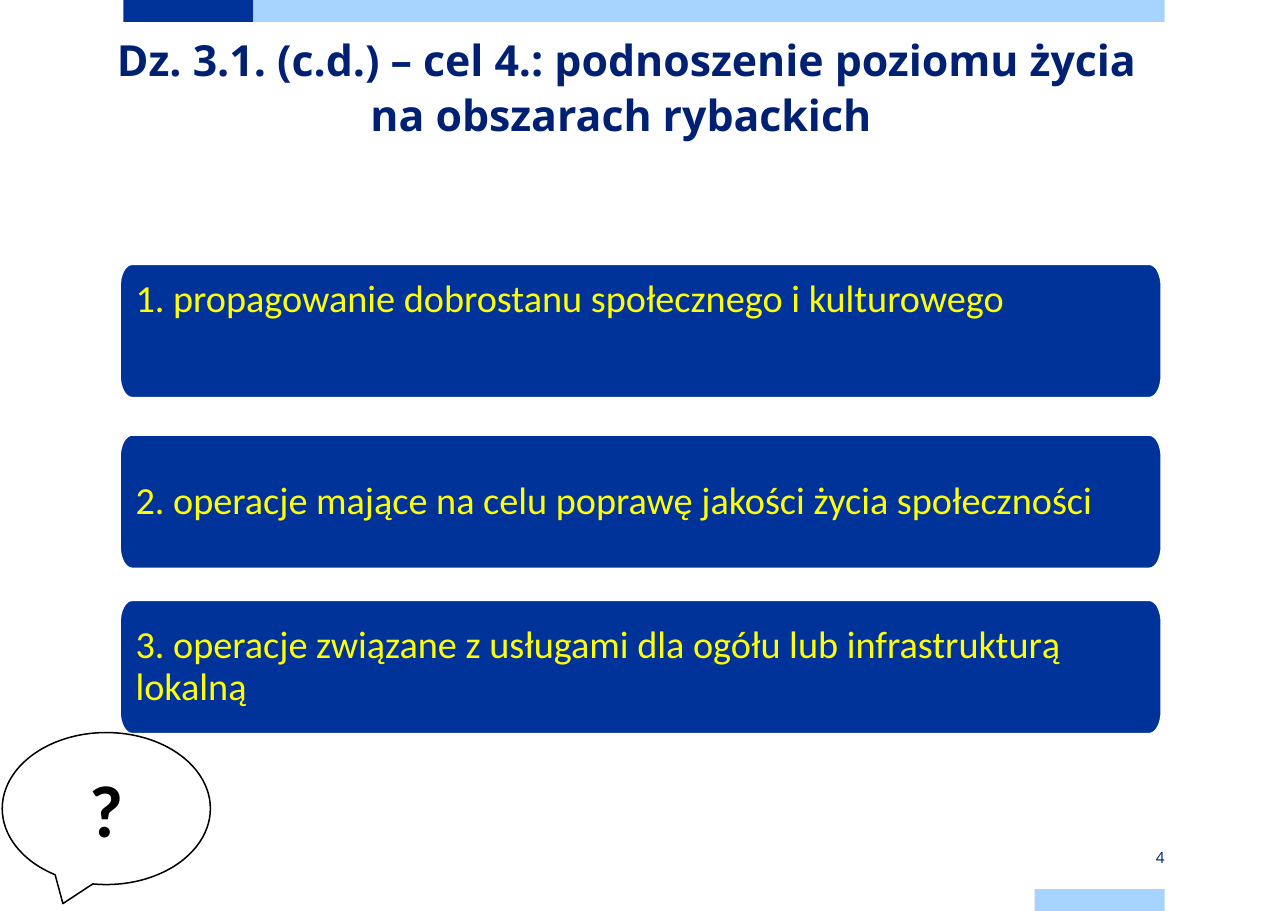
import math
from dataclasses import dataclass

from pptx import Presentation
from pptx import util as u
from pptx.dml.color import RGBColor
from pptx.enum import shapes, text

COLOURS = {
    "navy": "003399", "sky": "A6D3FF", "ink": "002073",
    "yellow": "FFFF00", "white": "FFFFFF", "black": "000000",
}
WIDTH, HEIGHT = u.Inches(11.69), u.Inches(8.27)
COLUMNS, ROWS = 99, 70
CORNER_COLUMNS, CORNER_ROWS = 0.93, 1.69
CORNER_STEPS = 8


@dataclass(frozen=True)
class Area:
    column: float
    row: float
    columns: float
    rows: float

    def box(self) -> tuple[int, int, int, int]:
        return (across(self.column), down(self.row),
                across(self.columns), down(self.rows))


@dataclass(frozen=True)
class Band:
    area: Area
    colour: str


@dataclass(frozen=True)
class Operation:
    row: float
    wording: str
    anchor: text.MSO_ANCHOR = text.MSO_ANCHOR.MIDDLE


@dataclass(frozen=True)
class Style:
    font: str
    size: float
    colour: str
    align: text.PP_ALIGN
    bold: bool = False
    spacing: float | u.Pt | None = None
    anchor: text.MSO_ANCHOR = text.MSO_ANCHOR.MIDDLE
    inset: float = 0


BANDS = [
    Band(Area(9.49, 0, 10, 1.69), "navy"),
    Band(Area(19.48, 0, 70.04, 1.69), "sky"),
    Band(Area(79.52, 68.31, 10, 1.69), "sky"),
]
OPERATIONS = [
    Operation(20.31, "1. propagowanie dobrostanu społecznego i kulturowego",
              text.MSO_ANCHOR.TOP),
    Operation(33.43, "2. operacje mające na celu poprawę jakości życia społeczności"),
    Operation(46.13, "3. operacje związane z usługami dla ogółu lub infrastrukturą lokalną"),
]


def across(columns: float) -> int:
    return round(WIDTH * columns / COLUMNS)


def down(rows: float) -> int:
    return round(HEIGHT * rows / ROWS)


def rgb(name: str) -> RGBColor:
    return RGBColor.from_string(COLOURS[name])


def paint(shape, fill: str, line: str | None = None) -> None:
    shape.shadow.inherit = False
    shape.fill.solid()
    shape.fill.fore_color.rgb = rgb(fill)
    if line:
        shape.line.color.rgb = rgb(line)
        shape.line.width = u.Pt(1)
    else:
        shape.line.fill.background()


def write(shape, wording: str, style: Style) -> None:
    frame = shape.text_frame
    frame.word_wrap = True
    frame.vertical_anchor = style.anchor
    frame.margin_left = frame.margin_right = u.Inches(style.inset)
    frame.margin_top = frame.margin_bottom = u.Inches(style.inset)
    paragraph = frame.paragraphs[0]
    paragraph.text = wording
    paragraph.alignment = style.align
    if style.spacing:
        paragraph.line_spacing = style.spacing
    paragraph.font.name = style.font
    paragraph.font.size = u.Pt(style.size)
    paragraph.font.bold = style.bold
    paragraph.font.color.rgb = rgb(style.colour)


def rounded_outline(area: Area) -> list[tuple[int, int]]:
    left, right = area.column + CORNER_COLUMNS, area.column + area.columns - CORNER_COLUMNS
    top, bottom = area.row + CORNER_ROWS, area.row + area.rows - CORNER_ROWS
    centres = [(right, bottom), (left, bottom), (left, top), (right, top)]
    points = []
    for quarter, (x, y) in enumerate(centres):
        for step in range(CORNER_STEPS + 1):
            angle = math.pi / 2 * (quarter + step / CORNER_STEPS)
            points.append((across(x + CORNER_COLUMNS * math.cos(angle)),
                           down(y + CORNER_ROWS * math.sin(angle))))
    return points


def draw_band(slide, band: Band) -> None:
    paint(slide.shapes.add_shape(shapes.MSO_SHAPE.RECTANGLE, *band.area.box()), band.colour)


def draw_operation(slide, operation: Operation) -> None:
    start, *rest = rounded_outline(Area(9.23, operation.row, 80.03, 10.24))
    outline = slide.shapes.build_freeform(*start)
    outline.add_line_segments(rest, close=True)
    panel = outline.convert_to_shape()
    paint(panel, "navy", "white")
    write(panel, operation.wording,
          Style("Calibri", 25, "yellow", text.PP_ALIGN.LEFT, spacing=0.9,
                anchor=operation.anchor, inset=0.14))


def draw_text(slide, area: Area, wording: str, style: Style) -> None:
    write(slide.shapes.add_textbox(*area.box()), wording, style)


def draw_question(slide) -> None:
    bubble = slide.shapes.add_shape(shapes.MSO_SHAPE.OVAL_CALLOUT,
                                    *Area(0.17, 56.29, 16, 11.68).box())
    paint(bubble, "white", "black")
    write(bubble, "?", Style("Calibri", 48, "black", text.PP_ALIGN.CENTER,
                             bold=True, inset=0.05))


def main() -> None:
    deck = Presentation()
    deck.slide_width, deck.slide_height = WIDTH, HEIGHT
    slide = deck.slides.add_slide(deck.slide_layouts[6])
    for band in BANDS:
        draw_band(slide, band)
    draw_text(slide, Area(8.13, 2.29, 80.03, 12.02),
              "Dz. 3.1. (c.d.) – cel 4.: podnoszenie poziomu życia na obszarach rybackich ",
              Style("Open Sans", 28, "ink", text.PP_ALIGN.CENTER, bold=True,
                    spacing=u.Pt(36), anchor=text.MSO_ANCHOR.TOP))
    for operation in OPERATIONS:
        draw_operation(slide, operation)
    draw_text(slide, Area(79.52, 65.01, 10, 1.69), "4",
              Style("Open Sans", 10, "ink", text.PP_ALIGN.RIGHT))
    draw_question(slide)
    deck.save("out.pptx")


if __name__ == "__main__":
    main()
